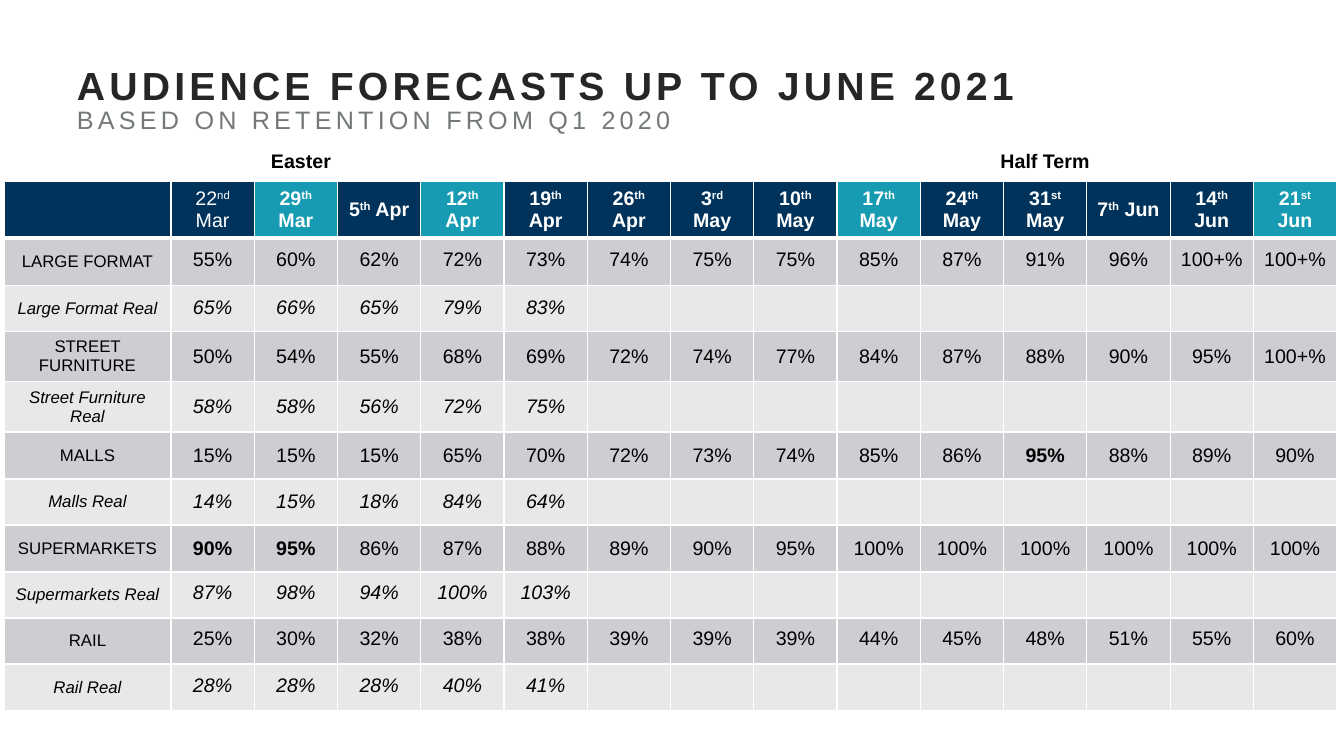
import pptx
import pptx.dml.color
import pptx.enum.text
import pptx.oxml
import pptx.oxml.ns
import pptx.util

PX = 12192000 / 1344
COLORS = {
    "title": "262626", "subtitle": "737976", "black": "000000", "white": "FFFFFF",
    "navy": "00335B", "teal": "169BB2", "forecast": "CCCED2", "real": "E7E8EA",
}
CENTER = pptx.enum.text.PP_ALIGN.CENTER
MIDDLE = pptx.enum.text.MSO_ANCHOR.MIDDLE


def px(length):
    return pptx.util.Emu(round(length * PX))


def add_run(paragraph, text, size, color, rpr={}, **font_values):
    """Append a run; rpr holds raw attributes such as spacing and baseline."""
    run = paragraph.add_run()
    run.text = text
    values = {"name": "Arial", "size": pptx.util.Pt(size), "bold": False, **font_values}
    for name, value in values.items():
        setattr(run.font, name, value)
    run.font.color.rgb = pptx.dml.color.RGBColor.from_string(COLORS[color])
    for name, value in rpr.items():
        run._r.get_or_add_rPr().set(name, value)


presentation = pptx.Presentation()
presentation.slide_width, presentation.slide_height = px(1344), px(756)
slide = presentation.slides.add_slide(presentation.slide_layouts[6])

# Title and subtitle
frame = slide.shapes.add_textbox(px(77), px(69), px(1194), px(111)).text_frame
frame.word_wrap = True
for side in ("left", "top", "right", "bottom"):
    setattr(frame, f"margin_{side}", 0)
paragraph = frame.paragraphs[0]
paragraph.line_spacing = 0.85
add_run(paragraph, "AUDIENCE FORECASTS UP TO JUNE 2021", 28, "title", {"spc": "300"}, bold=True)
paragraph.add_line_break()
add_run(paragraph, "BASED ON RETENTION FROM Q1 2020", 18, "subtitle", {"spc": "300"})

# Holiday labels above the table
for label, left, width in (("Half Term", 988, 114), ("Easter", 261, 80)):
    frame = slide.shapes.add_textbox(px(left), px(144), px(width), px(34)).text_frame
    frame.word_wrap = True
    frame.paragraphs[0].alignment = CENTER
    add_run(frame.paragraphs[0], label, 14, "black", bold=True)

# Forecast table
WEEKS = [
    ("22", "nd", "Mar"), ("29", "th", "Mar"), ("5", "th", "Apr"), ("12", "th", "Apr"),
    ("19", "th", "Apr"), ("26", "th", "Apr"), ("3", "rd", "May"), ("10", "th", "May"),
    ("17", "th", "May"), ("24", "th", "May"), ("31", "st", "May"), ("7", "th", "Jun"),
    ("14", "th", "Jun"), ("21", "st", "Jun"),
]
TEAL_COLUMNS = {2, 4, 9, 14}
AUDIENCES = [
    ("LARGE FORMAT", "55 60 62 72 73 74 75 75 85 87 91 96 100+ 100+"),
    ("Large Format Real", "65 66 65 79 83"),
    ("STREET FURNITURE", "50 54 55 68 69 72 74 77 84 87 88 90 95 100+"),
    ("Street Furniture Real", "58 58 56 72 75"),
    ("MALLS", "15 15 15 65 70 72 73 74 85 86 95 88 89 90"),
    ("Malls Real", "14 15 18 84 64"),
    ("SUPERMARKETS", "90 95 86 87 88 89 90 95 100 100 100 100 100 100"),
    ("Supermarkets Real", "87 98 94 100 103"),
    ("RAIL", "25 30 32 38 38 39 39 39 44 45 48 51 55 60"),
    ("Rail Real", "28 28 28 40 41"),
]
BOLD_CELLS = {(5, 11), (7, 1), (7, 2)}
TIGHT_ROWS = {1, 8, 9, 10}
TIGHT_MARGINS = {"margin_left": 1, "margin_top": 1, "margin_right": 1, "margin_bottom": 5}
ROW_HEIGHTS = [57, 47, 46, 50, 50, 47, 46, 47, 46, 46, 47]
TABLE_WIDTH, LABEL_WIDTH = 1333, 167

table = slide.shapes.add_table(
    len(ROW_HEIGHTS), len(WEEKS) + 1, px(4), px(181), px(TABLE_WIDTH), px(sum(ROW_HEIGHTS))
).table
table.first_row = table.horz_banding = False
for row, height in zip(table.rows, ROW_HEIGHTS):
    row.height = px(height)
for column in table.columns:
    column.width = px((TABLE_WIDTH - LABEL_WIDTH) / len(WEEKS))
table.columns[0].width = px(LABEL_WIDTH)

for row_index in range(len(ROW_HEIGHTS)):
    for column_index in range(len(WEEKS) + 1):
        cell = table.cell(row_index, column_index)
        cell.vertical_anchor = MIDDLE
        paragraph = cell.text_frame.paragraphs[0]
        paragraph.alignment = CENTER
        if row_index == 0:
            fill = "teal" if column_index in TEAL_COLUMNS else "navy"
            if column_index:
                day, suffix, month = WEEKS[column_index - 1]
                bold = column_index > 1
                add_run(paragraph, day, 14, "white", bold=bold)
                add_run(paragraph, suffix, 14, "white", {"baseline": "30000"}, bold=bold)
                add_run(paragraph, f" {month}", 14, "white", bold=bold)
        else:
            label, figures = AUDIENCES[row_index - 1]
            texts = [label] + [f"{figure}%" for figure in figures.split()]
            is_real = label.endswith("Real")
            fill = "real" if is_real else "forecast"
            if column_index < len(texts):
                add_run(paragraph, texts[column_index], 14 if column_index else 12, "black",
                        bold=(row_index, column_index) in BOLD_CELLS, italic=is_real)
            if row_index in TIGHT_ROWS and column_index:
                for name, value in TIGHT_MARGINS.items():
                    setattr(cell, name, px(value))
        for side in "LRTB":
            points = 3 if row_index == 0 and side == "B" else 1
            cell._tc.get_or_add_tcPr().append(pptx.oxml.parse_xml(
                f'<a:ln{side} {pptx.oxml.ns.nsdecls("a")} w="{pptx.util.Pt(points)}"><a:solidFill>'
                f'<a:srgbClr val="{COLORS["white"]}"/></a:solidFill></a:ln{side}>'))
        cell.fill.solid()
        cell.fill.fore_color.rgb = pptx.dml.color.RGBColor.from_string(COLORS[fill])

presentation.save("out.pptx")
